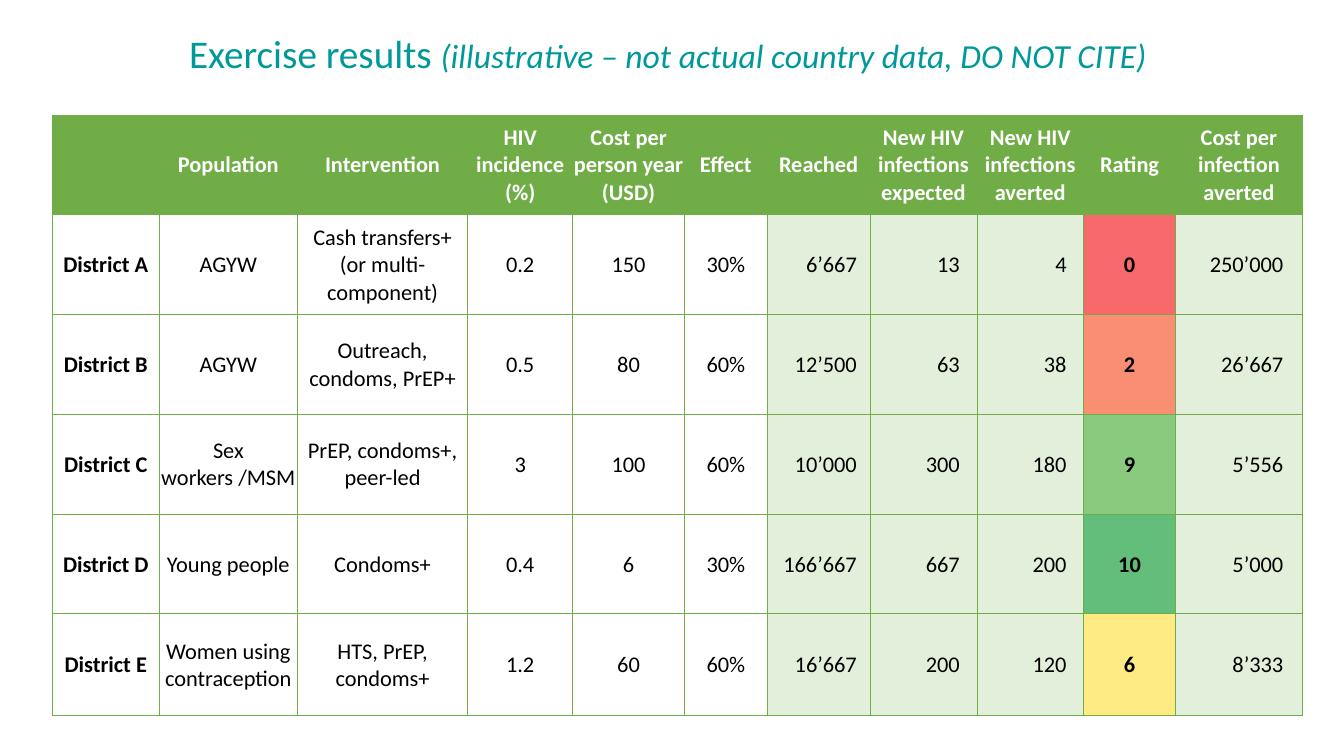
import pptx
import pptx.util
import pptx.dml.color
import pptx.enum.text
import pptx.oxml

# Content
TITLE = [
    ("Exercise results ", {"size": 28, "italic": False}),
    ("(illustrative – not actual country data, DO NOT CITE)", {"size": 24, "italic": True}),
]
HEADER = ["", "Population", "Intervention", "HIV incidence (%)", "Cost per person year (USD)",
          "Effect", "Reached", "New HIV infections expected", "New HIV infections averted",
          "Rating", "Cost per infection averted"]
DISTRICTS = [
    ["District A", "AGYW", "Cash transfers+ (or multi-component)", "0.2", "150", "30%",
     "6’667", "13", "4", "0", "250’000"],
    ["District B", "AGYW", "Outreach, condoms, PrEP+", "0.5", "80", "60%",
     "12’500", "63", "38", "2", "26’667"],
    ["District C", "Sex workers /MSM", "PrEP, condoms+, peer-led", "3", "100", "60%",
     "10’000", "300", "180", "9", "5’556"],
    ["District D", "Young people", "Condoms+", "0.4", "6", "30%",
     "166’667", "667", "200", "10", "5’000"],
    ["District E", "Women using contraception", "HTS, PrEP, condoms+", "1.2", "60", "60%",
     "16’667", "200", "120", "6", "8’333"],
]

# Format
COLORS = {"title": "009999", "green": "70AD47", "result": "E2EFDA",
          "white": "FFFFFF", "black": "000000"}
RATING_COLORS = {"0": "F8696B", "2": "FA8E72", "6": "FFEB84", "9": "8ACA7E", "10": "63BE7B"}
FONT = "Calibri"
DISTRICT_COLUMN, RATING_COLUMN = 0, 9
RESULT_INDENTS = {6: 0.13, 7: 0.17, 8: 0.17, 10: 0.19}  # right margin of each result column

# Grid, in inches
SLIDE = (13.33, 7.5)
TITLE_BOX = (1.76, 0.24, 9.73, 0.57)
TABLE_LEFT, TABLE_TOP = 0.52, 1.14
COLUMNS = [1.06, 1.37, 1.69, 1.04, 1.11, 0.82, 1.02, 1.06, 1.06, 0.91, 1.26]
ROWS = [0.99] * len(DISTRICTS) + [1.01]
CELL_MARGIN = 0.01

inches = pptx.util.Inches
align = pptx.enum.text.PP_ALIGN


def rgb(value):
    return pptx.dml.color.RGBColor.from_string(value)


def set_font(font, color, size, **values):
    font.color.rgb = rgb(color)
    for name, value in {"name": FONT, "size": pptx.util.Pt(size), **values}.items():
        setattr(font, name, value)


def add_borders(cell):
    properties = cell._tc.get_or_add_tcPr()
    for side in ("lnL", "lnR", "lnT", "lnB"):
        properties.append(pptx.oxml.parse_xml(
            f'<a:{side} xmlns:a="http://schemas.openxmlformats.org/drawingml/2006/main" '
            f'w="{pptx.util.Pt(0.5)}"><a:solidFill><a:srgbClr val="{COLORS["green"]}"/>'
            f'</a:solidFill></a:{side}>'))


def cell_fill(row, column, text):
    if row == 0:
        return COLORS["green"]
    if column == RATING_COLUMN:
        return RATING_COLORS[text]
    return COLORS["result"] if column in RESULT_INDENTS else None


def format_cell(cell, row, column, text):
    is_result = row > 0 and column in RESULT_INDENTS
    margins = {
        "margin_left": inches(CELL_MARGIN),
        "margin_right": inches(RESULT_INDENTS[column] if is_result else CELL_MARGIN),
        "margin_top": inches(CELL_MARGIN),
        "margin_bottom": 0,
        "vertical_anchor": pptx.enum.text.MSO_ANCHOR.MIDDLE,
    }
    for name, value in margins.items():
        setattr(cell, name, value)
    add_borders(cell)
    color = cell_fill(row, column, text)
    if color:
        cell.fill.solid()
        cell.fill.fore_color.rgb = rgb(color)
    else:
        cell.fill.background()
    cell.text = text
    para = cell.text_frame.paragraphs[0]
    para.alignment = align.RIGHT if is_result else align.CENTER
    for span in para.runs:
        set_font(span.font, COLORS["black" if row else "white"], 16,
                 bold=row == 0 or column in (DISTRICT_COLUMN, RATING_COLUMN))


def add_title(page):
    title = page.shapes.title
    for name, value in zip(("left", "top", "width", "height"), TITLE_BOX):
        setattr(title, name, inches(value))
    frame = title.text_frame
    frame.word_wrap = False
    frame.auto_size = pptx.enum.text.MSO_AUTO_SIZE.SHAPE_TO_FIT_TEXT
    para = frame.paragraphs[0]
    para.alignment = align.CENTER
    for text, values in TITLE:
        span = para.add_run()
        span.text = text
        set_font(span.font, COLORS["title"], **values)


def add_results(page):
    lines = [HEADER] + DISTRICTS
    table = page.shapes.add_table(
        len(ROWS), len(COLUMNS), inches(TABLE_LEFT), inches(TABLE_TOP),
        inches(sum(COLUMNS)), inches(sum(ROWS))).table
    table.first_row = table.horz_banding = False
    for column, width in zip(table.columns, COLUMNS):
        column.width = inches(width)
    for row, height in zip(table.rows, ROWS):
        row.height = inches(height)
    for row, line in enumerate(lines):
        for column, text in enumerate(line):
            format_cell(table.cell(row, column), row, column, text)


def main():
    deck = pptx.Presentation()
    deck.slide_width, deck.slide_height = map(inches, SLIDE)
    page = deck.slides.add_slide(deck.slide_layouts.get_by_name("Title Only"))
    add_title(page)
    add_results(page)
    deck.save("out.pptx")


if __name__ == "__main__":
    main()
